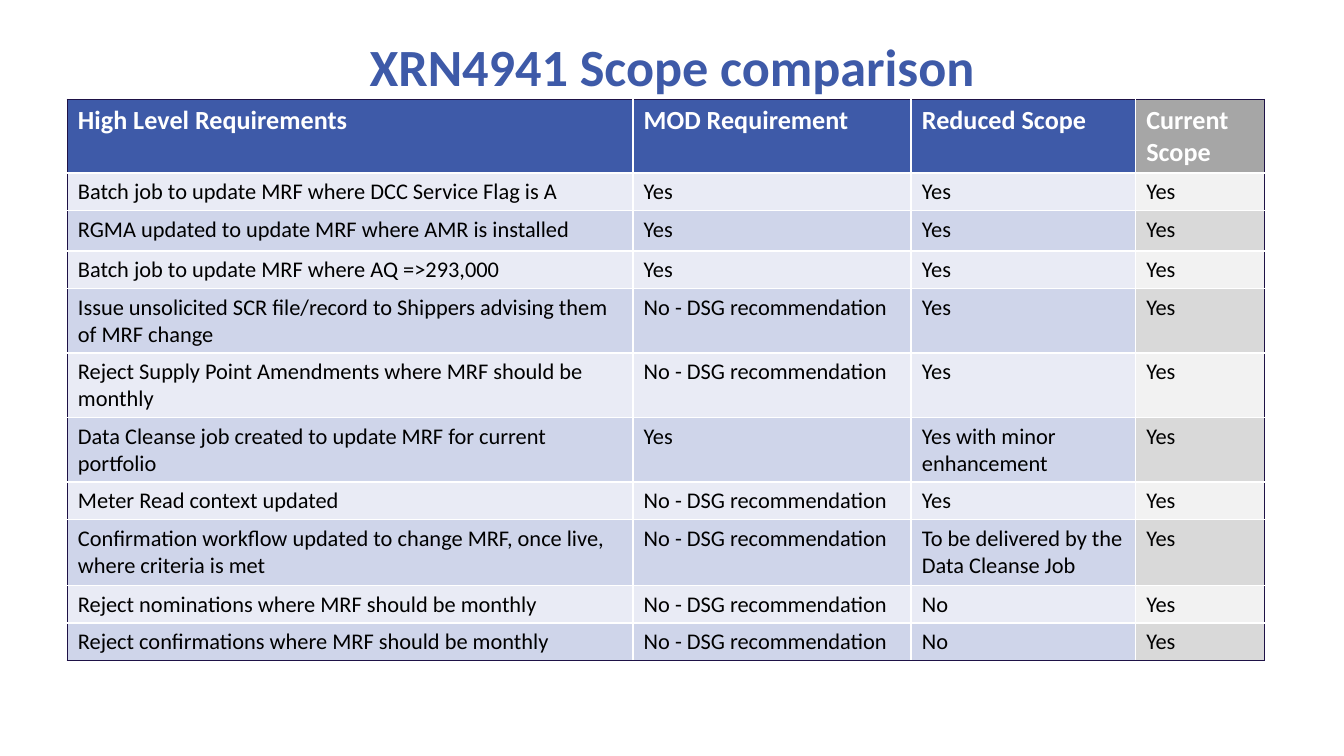
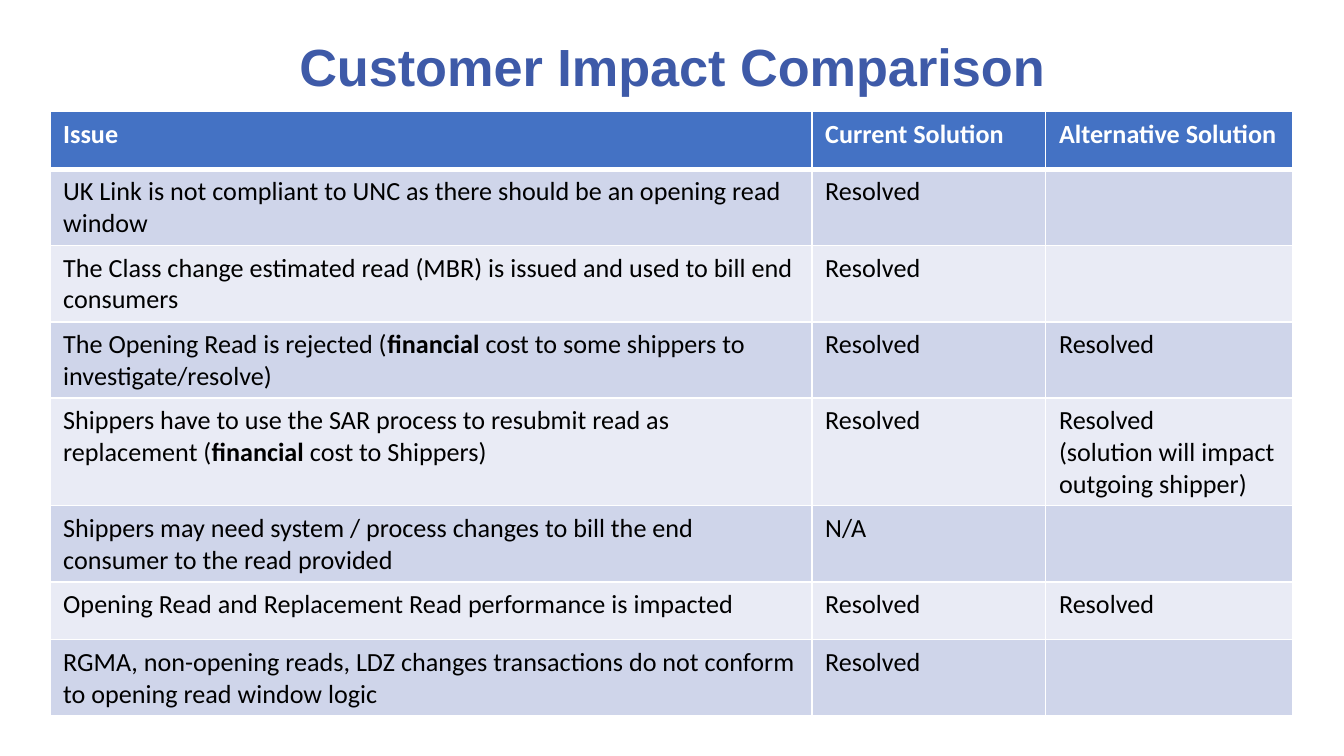
import pptx
import pptx.util
import pptx.dml.color
import pptx.enum.text
import pptx.oxml
import pptx.oxml.ns

Inches = pptx.util.Inches
Pt = pptx.util.Pt
RGBColor = pptx.dml.color.RGBColor

WHITE = RGBColor(0xFF, 0xFF, 0xFF)
BLACK = RGBColor(0x00, 0x00, 0x00)
NAVY = RGBColor(0x3E, 0x5A, 0xA8)
BLUE = RGBColor(0x44, 0x72, 0xC4)
PALE_BLUE = RGBColor(0xE9, 0xEB, 0xF5)
LIGHT_BLUE = RGBColor(0xCF, 0xD5, 0xEA)
HEADER_GREY = RGBColor(0xA6, 0xA6, 0xA6)
PALE_GREY = RGBColor(0xF2, 0xF2, 0xF2)
LIGHT_GREY = RGBColor(0xD9, 0xD9, 0xD9)
OUTLINE = RGBColor(0x1E, 0x12, 0x46)

TABLE_FONT = "Calibri"
HEADER_SIZE = 14
BOLD_MARK = "*"
NO_DSG = "No - DSG recommendation"

BLUE_BANDS = (NAVY, PALE_BLUE, LIGHT_BLUE)
GREY_BANDS = (HEADER_GREY, PALE_GREY, LIGHT_GREY)
ISSUE_BANDS = (BLUE, LIGHT_BLUE, PALE_BLUE)

SCOPE = {
    "title": "XRN4941 Scope comparison",
    "title_font": "Calibri",
    "position": (0.5, 0.74),
    "size": (8.9, 4.16),
    "columns": (4.21, 2.07, 1.67, 0.96),
    "row_heights": (0.37, 0.23, 0.3, 0.28, 0.37, 0.37, 0.37, 0.12, 0.49, 0.2, 0.28),
    "bands": (BLUE_BANDS, BLUE_BANDS, BLUE_BANDS, GREY_BANDS),
    "margins": (0.08, 0.04),
    "body_size": 12,
    "outer_border": (OUTLINE, 0.59),
    "header_rule": 1,
    "rows": [
        ("High Level Requirements", "MOD Requirement", "Reduced Scope", "Current Scope"),
        ("Batch job to update MRF where DCC Service Flag is A", "Yes", "Yes", "Yes"),
        ("RGMA updated to update MRF where AMR is installed", "Yes", "Yes", "Yes"),
        ("Batch job to update MRF where AQ =>293,000", "Yes", "Yes", "Yes"),
        ("Issue unsolicited SCR file/record to Shippers advising them of MRF change",
         NO_DSG, "Yes", "Yes"),
        ("Reject Supply Point Amendments where MRF should be monthly", NO_DSG, "Yes", "Yes"),
        ("Data Cleanse job created to update MRF for current portfolio",
         "Yes", "Yes with minor enhancement", "Yes"),
        ("Meter Read context updated", NO_DSG, "Yes", "Yes"),
        ("Confirmation workflow updated to change MRF, once live, where criteria is met",
         NO_DSG, "To be delivered by the Data Cleanse Job", "Yes"),
        ("Reject nominations where MRF should be monthly", NO_DSG, "No", "Yes"),
        ("Reject confirmations where MRF should be monthly", NO_DSG, "No", "Yes"),
    ],
}

IMPACT = {
    "title": "Customer Impact Comparison",
    "title_font": "Arial",
    "position": (0.37, 0.83),
    "size": (9.26, 4.5),
    "columns": (5.67, 1.74, 1.84),
    "row_heights": (0.43, 0.43, 0.41, 0.41, 0.43, 0.43, 0.43, 0.43),
    "bands": (ISSUE_BANDS, ISSUE_BANDS, ISSUE_BANDS),
    "margins": (0.1, 0.05),
    "body_size": 14,
    "outer_border": (WHITE, 1),
    "header_rule": 3,
    "rows": [
        ("Issue", "Current Solution", "Alternative Solution"),
        ("UK Link is not compliant to UNC as there should be an opening read window",
         "Resolved", ""),
        ("The Class change estimated read (MBR) is issued and used to bill end consumers",
         "Resolved", ""),
        ("The Opening Read is rejected (*financial* cost to some shippers to investigate/resolve)",
         "Resolved", "Resolved"),
        ("Shippers have to use the SAR process to resubmit read as replacement "
         "(*financial* cost to Shippers)",
         "Resolved", "Resolved\n(solution will impact outgoing shipper)"),
        ("Shippers may need system / process changes to bill the end consumer to the read provided",
         "N/A", ""),
        ("Opening Read and Replacement Read performance is impacted", "Resolved", "Resolved"),
        ("RGMA, non-opening reads, LDZ changes transactions do not conform "
         "to opening read window logic", "Resolved", ""),
    ],
}


def set_font(font, name, size, color, bold):
    font.name = name
    font.size = Pt(size)
    font.color.rgb = color
    font.bold = bold


def add_title(slide, text, font_name):
    box = slide.shapes.add_textbox(Inches(0.5), Inches(0.14), Inches(9), Inches(0.7))
    frame = box.text_frame
    frame.word_wrap = True
    frame.vertical_anchor = pptx.enum.text.MSO_ANCHOR.MIDDLE
    paragraph = frame.paragraphs[0]
    paragraph.text = text
    paragraph.alignment = pptx.enum.text.PP_ALIGN.CENTER
    set_font(paragraph.font, font_name, 28, NAVY, True)


def set_borders(cell, borders):
    properties = cell._tc.get_or_add_tcPr()
    for index, (side, (color, width)) in enumerate(borders.items()):
        line = pptx.oxml.parse_xml(
            f'<a:ln{side} {pptx.oxml.ns.nsdecls("a")} w="{Pt(width)}">'
            f'<a:solidFill><a:srgbClr val="{color}"/></a:solidFill></a:ln{side}>')
        properties.insert(index, line)


def write_cell(cell, text, size, color, bold):
    frame = cell.text_frame
    for index, line in enumerate(text.split("\n")):
        paragraph = frame.add_paragraph() if index else frame.paragraphs[0]
        set_font(paragraph.font, TABLE_FONT, size, color, bold)
        for part_index, part in enumerate(line.split(BOLD_MARK)):
            if part:
                run = paragraph.add_run()
                run.text = part
                if part_index % 2:
                    run.font.bold = True


def add_comparison_table(slide, content):
    rows, columns = content["rows"], content["columns"]
    left, top = content["position"]
    width, height = content["size"]
    table_frame = slide.shapes.add_table(
        len(rows), len(columns), Inches(left), Inches(top), Inches(width), Inches(height))
    table = table_frame.table
    for column, column_width in zip(table.columns, columns):
        column.width = Inches(column_width)
    for row, row_height in zip(table.rows, content["row_heights"]):
        row.height = Inches(row_height)
    table_frame.width, table_frame.height = Inches(width), Inches(height)

    outer, inner = content["outer_border"], (WHITE, 1)
    header_rule = (WHITE, content["header_rule"])
    last_row, last_column = len(rows) - 1, len(columns) - 1
    horizontal, vertical = content["margins"]
    for row_index, texts in enumerate(rows):
        is_header = row_index == 0
        band_index = 0 if is_header else 2 - row_index % 2
        for column_index, text in enumerate(texts):
            cell = table.cell(row_index, column_index)
            cell.margin_left = cell.margin_right = Inches(horizontal)
            cell.margin_top = cell.margin_bottom = Inches(vertical)
            cell.fill.solid()
            cell.fill.fore_color.rgb = content["bands"][column_index][band_index]
            set_borders(cell, {
                "L": outer if column_index == 0 else inner,
                "R": outer if column_index == last_column else inner,
                "T": outer if is_header else header_rule if row_index == 1 else inner,
                "B": outer if row_index == last_row else header_rule if is_header else inner,
            })
            write_cell(cell, text, HEADER_SIZE if is_header else content["body_size"],
                       WHITE if is_header else BLACK, is_header)


def main():
    presentation = pptx.Presentation()
    presentation.slide_width = Inches(10)
    presentation.slide_height = Inches(10) * 9 // 16
    for content in (SCOPE, IMPACT):
        slide = presentation.slides.add_slide(presentation.slide_layouts[6])
        add_title(slide, content["title"], content["title_font"])
        add_comparison_table(slide, content)
    presentation.save("out.pptx")


if __name__ == "__main__":
    main()
